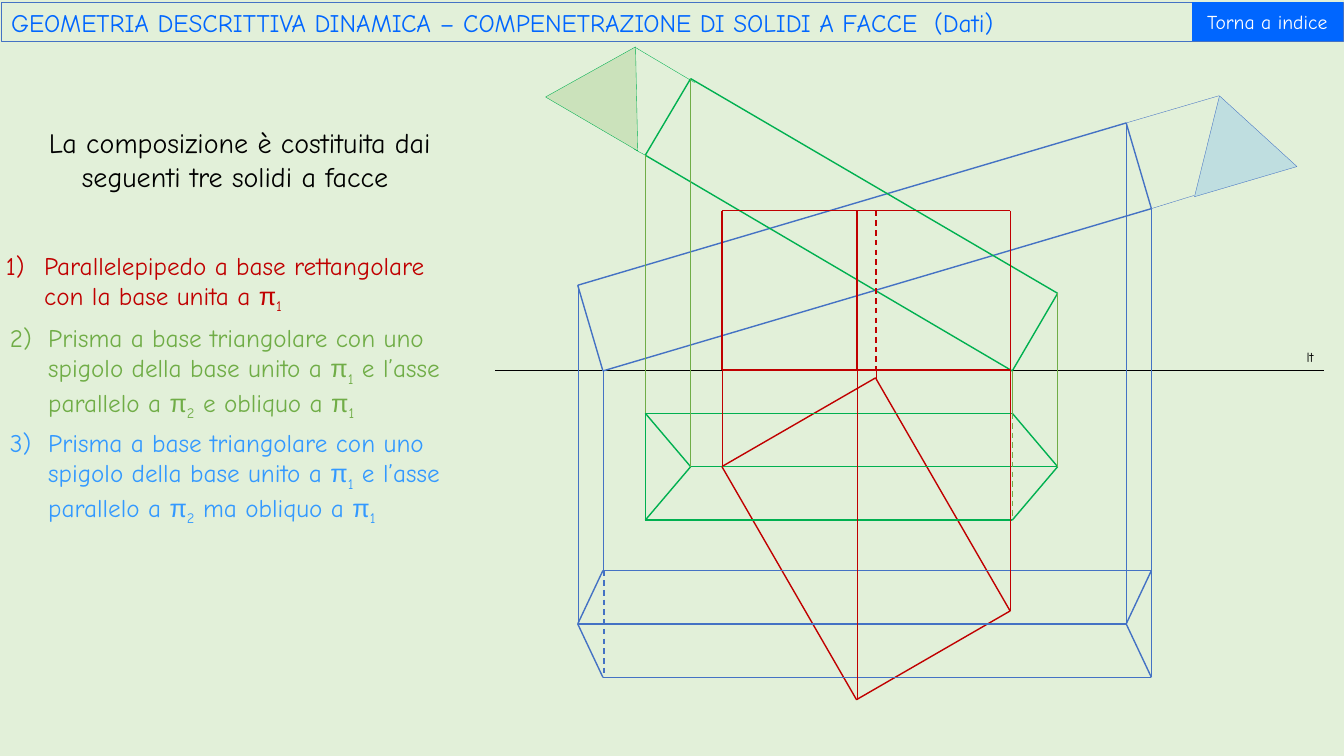
from itertools import pairwise

from lxml import etree
from pptx import Presentation
from pptx.dml.color import RGBColor
from pptx.enum import dml, shapes, text
from pptx.oxml.ns import qn
from pptx.util import Inches, Pt

COLORS = {
    "background": "E2F0D9", "black": "000000", "white": "FFFFFF",
    "title": "0066FF", "blue": "4472C4", "sky": "3399FF",
    "green": "00B050", "olive": "70AD47", "red": "C00000",
}
FONT = "Comic Neue"
THIN, THICK = 0.25, 1


def rgb(name):
    return RGBColor.from_string(COLORS[name])


def write(frame, words, size, color, align=text.PP_ALIGN.LEFT,
          anchor=text.MSO_ANCHOR.TOP, number=None):
    """Fill a text frame; the digit after each π becomes a subscript."""
    frame.word_wrap = True
    frame.auto_size = text.MSO_AUTO_SIZE.NONE
    frame.vertical_anchor = anchor
    frame.margin_left = frame.margin_right = Inches(0.1)
    frame.margin_top = frame.margin_bottom = Inches(0.05)
    paragraph = frame.paragraphs[0]
    paragraph.alignment = align
    first, *rest = words.split("π")
    pieces = [(first, FONT, False)]
    for piece in rest:
        pieces += [("π", "Arial", False), (piece[0], FONT, True), (piece[1:], FONT, False)]
    for wording, font, subscript in pieces:
        if not wording:
            continue
        run = paragraph.add_run()
        run.text = wording
        run.font.size = Pt(size)
        run.font.name = font
        run.font.color.rgb = rgb(color)
        if subscript:
            run.font._element.set("baseline", "-25000")
    if number:
        props = paragraph._p.get_or_add_pPr()
        props.set("marL", str(Inches(0.38)))
        props.set("indent", str(-Inches(0.38)))
        etree.SubElement(props, qn("a:buFont"), typeface=FONT)
        etree.SubElement(props, qn("a:buAutoNum"), type="arabicParenR", startAt=str(number))


deck = Presentation()
deck.slide_width, deck.slide_height = Inches(13.33), Inches(7.5)
slide = deck.slides.add_slide(deck.slide_layouts[5])
slide.background.fill.solid()
slide.background.fill.fore_color.rgb = rgb("background")

# Title bar
title = slide.shapes.title
title.left, title.top = Inches(0.01), Inches(0.02)
title.width, title.height = Inches(13.31), Inches(0.39)
title.line.color.rgb = rgb("blue")
title.line.width = Pt(THIN)
write(title.text_frame,
      "GEOMETRIA DESCRITTIVA DINAMICA – COMPENETRAZIONE DI SOLIDI A FACCE  (Dati)",
      18, "title")

# Triangular sections of the prisms and plan of the box
outlines = [
    (shapes.MSO_SHAPE.ISOSCELES_TRIANGLE, (5.56, 0.41, 1.06, 0.88), 30.3, "olive", "green", THIN),
    (shapes.MSO_SHAPE.ISOSCELES_TRIANGLE, (11.7, 0.93, 1.06, 0.89), 343.6, "sky", "blue", THIN),
    (shapes.MSO_SHAPE.RECTANGLE, (7.71, 4.01, 1.76, 2.67), 330, None, "red", THICK),
]
for kind, box, angle, tint, edge, weight in outlines:
    section = slide.shapes.add_shape(kind, *map(Inches, box))
    section.shadow.inherit = False
    section.rotation = angle
    section.line.color.rgb = rgb(edge)
    section.line.width = Pt(weight)
    if tint:
        section.adjustments[0] = 0.491
        section.fill.solid()
        section.fill.fore_color.rgb = rgb(tint)
        tint_color = section.fill._xPr.find(".//" + qn("a:srgbClr"))
        etree.SubElement(tint_color, qn("a:alpha"), val="20000")
    else:
        section.fill.background()

# Each entry: colour, weight, dashed, chains of points
drawing = [
    ("black", THIN, False, [[(4.91, 3.67), (13.13, 3.67)]]),
    # Blue prism: elevation, plan, projection lines, hidden edge
    ("blue", THICK, False, [
        [(5.98, 3.68), (11.42, 2.07), (11.17, 1.22), (5.73, 2.83), (5.98, 3.68)],
        [(5.98, 5.66), (11.42, 5.66), (11.17, 6.19), (11.42, 6.72),
         (5.98, 6.72), (5.73, 6.19), (5.98, 5.66)],
        [(5.73, 6.19), (11.17, 6.19)],
    ]),
    ("blue", THIN, False, [
        [(5.73, 2.83), (5.73, 6.19)],
        [(5.98, 3.68), (5.98, 5.66)],
        [(11.17, 1.22), (11.17, 6.19)],
        [(11.42, 2.07), (11.42, 6.72)],
        [(11.17, 1.22), (12.09, 0.95)],
        [(11.42, 2.07), (11.84, 1.94)],
    ]),
    ("blue", THICK, True, [[(5.99, 5.66), (5.99, 6.72)]]),
    # Green prism
    ("green", THICK, False, [
        [(6.4, 1.54), (6.85, 0.78), (10.49, 2.91), (10.04, 3.68), (6.4, 1.54)],
        [(6.4, 4.1), (10.04, 4.1), (10.49, 4.63), (10.04, 5.16),
         (6.4, 5.16), (6.85, 4.63), (6.4, 4.1), (6.4, 5.16)],
        [(6.85, 4.63), (10.49, 4.63)],
    ]),
    ("olive", THIN, False, [
        [(6.4, 1.54), (6.4, 4.1)],
        [(6.85, 0.78), (6.85, 4.63)],
        [(10.04, 3.68), (10.04, 4.1)],
        [(10.49, 2.91), (10.49, 4.63)],
    ]),
    ("green", THIN, False, [[(6.3, 0.47), (6.89, 0.82)], [(6.29, 1.48), (6.4, 1.54)]]),
    ("olive", THICK, True, [[(10.04, 4.1), (10.04, 5.16)]]),
    # Red box
    ("red", THICK, False, [
        [(7.16, 3.67), (7.16, 2.09), (10.02, 2.09), (10.02, 3.67), (7.16, 3.67)],
        [(8.5, 2.09), (8.5, 3.67)],
    ]),
    ("red", THICK, True, [[(8.69, 2.09), (8.69, 3.67)]]),
    ("red", THIN, False, [
        [(7.16, 3.67), (7.16, 4.64)],
        [(8.5, 3.67), (8.5, 6.94)],
        [(8.69, 3.67), (8.69, 3.77)],
        [(10.02, 3.67), (10.02, 6.06)],
    ]),
]
for color, weight, dashed, chains in drawing:
    for chain in chains:
        for start, end in pairwise(chain):
            edge = slide.shapes.add_connector(
                shapes.MSO_CONNECTOR.STRAIGHT, *map(Inches, start + end))
            edge.line.color.rgb = rgb(color)
            edge.line.width = Pt(weight)
            if dashed:
                edge.line.dash_style = dml.MSO_LINE.DASH
            etree.SubElement(edge._element.spPr, qn("a:effectLst"))

# Ground line label, introduction and numbered solids
prism = "Prisma a base triangolare con uno spigolo della base unito a π1 e l’asse parallelo a π2 "
captions = [
    ((12.86, 3.41, 0.39, 0.27), "lt", 10, "black", {}),
    ((0, 1.2, 4.76, 0.77), "La composizione è costituita dai seguenti tre solidi a facce ",
     20, "black", {"align": text.PP_ALIGN.CENTER}),
    ((-0.04, 2.43, 4.72, 0.71), "Parallelepipedo a base rettangolare con la base unita a π1",
     18, "red", {"number": 1}),
    ((0, 3.15, 4.72, 1.01), prism + "e obliquo a π1", 18, "olive", {"number": 2}),
    ((0, 4.19, 4.72, 1.01), prism + "ma obliquo a π1", 18, "sky", {"number": 3}),
]
for box, words, size, color, extras in captions:
    caption = slide.shapes.add_textbox(*map(Inches, box))
    write(caption.text_frame, words, size, color, **extras)

index_button = slide.shapes.add_shape(
    shapes.MSO_SHAPE.ACTION_BUTTON_CUSTOM, *map(Inches, (11.82, 0.02, 1.5, 0.39)))
index_button.shadow.inherit = False
index_button.fill.solid()
index_button.fill.fore_color.rgb = rgb("title")
index_button.line.fill.background()
write(index_button.text_frame, "Torna a indice", 14, "white",
      align=text.PP_ALIGN.CENTER, anchor=text.MSO_ANCHOR.MIDDLE)

deck.save("out.pptx")
